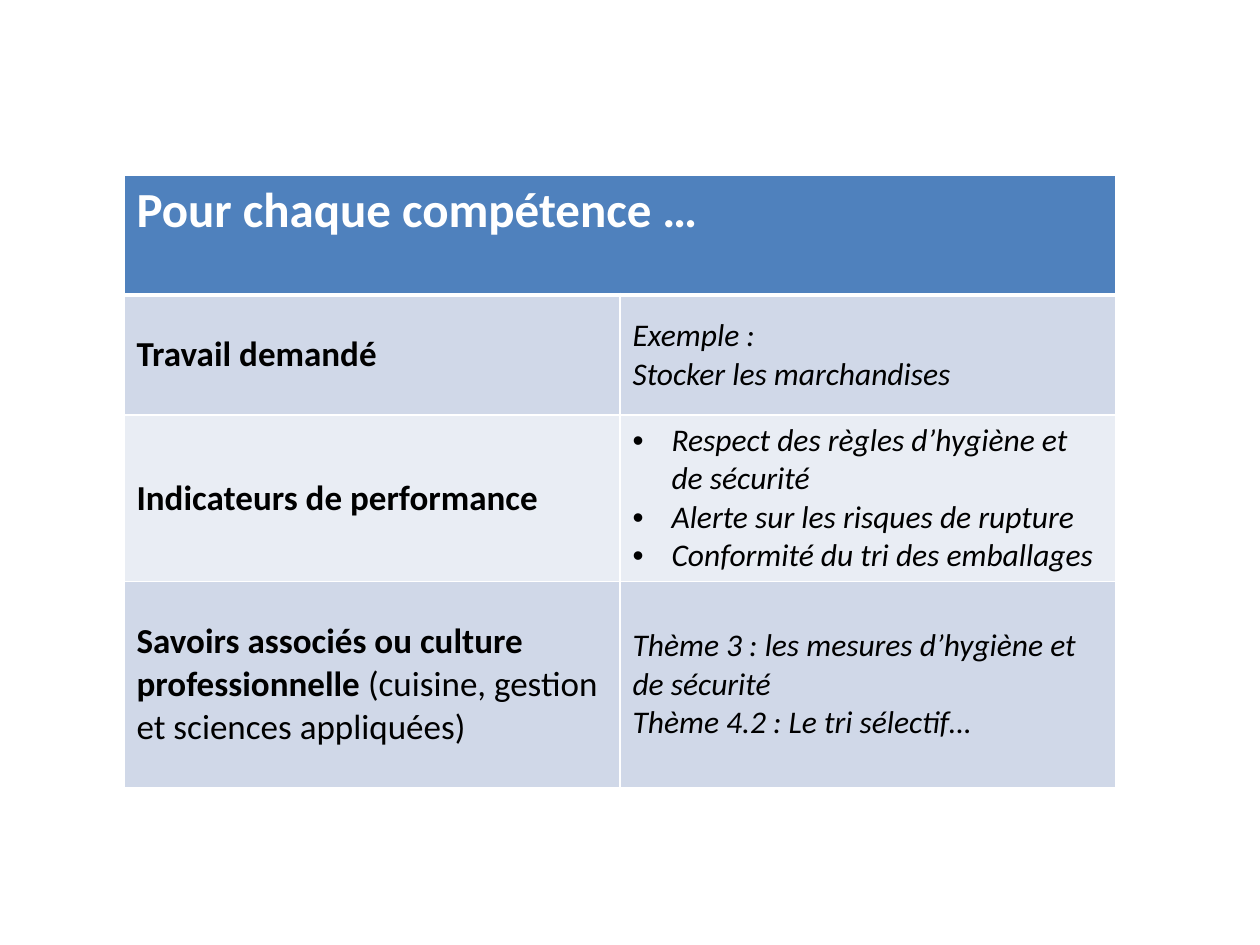
from dataclasses import dataclass

from lxml import etree
from pptx import Presentation
from pptx import util as u
from pptx.dml.color import RGBColor
from pptx.enum import text
from pptx.oxml import ns

PX = 914400 / 126


def px(n):
    return u.Emu(round(n * PX))


@dataclass(frozen=True)
class Theme:
    font: str = "Calibri"
    white: str = "FFFFFF"
    black: str = "000000"
    header: str = "4F81BD"
    bands: tuple = ("D0D8E8", "E9EDF4")
    title_size: int = 28
    label_size: int = 20
    detail_size: int = 18
    rule: int = 1
    header_rule: int = 3
    bullet_indent: int = 39


class Deck:
    def __init__(self, theme):
        self.theme = theme
        self.prs = Presentation()
        self.prs.slide_width, self.prs.slide_height = px(1260), px(945)
        self.s = self.prs.slides.add_slide(self.prs.slide_layouts[6])

    def table(self, x, y, widths, heights):
        frame = self.s.shapes.add_table(
            len(heights), len(widths), px(x), px(y), px(sum(widths)), px(sum(heights)))
        tbl = frame.table
        for col, w in zip(tbl.columns, widths):
            col.width = px(w)
        for row, h in zip(tbl.rows, heights):
            row.height = px(h)
        return tbl

    def cell(self, cell, fill, top=None, bottom=None):
        """Fill a cell and draw its four borders; top and bottom are points."""
        cell.fill.solid()
        cell.fill.fore_color.rgb = RGBColor.from_string(fill)
        rule = self.theme.rule
        sides = {"lnL": rule, "lnR": rule, "lnT": top or rule, "lnB": bottom or rule}
        tc_pr = cell._tc.get_or_add_tcPr()
        for i, (side, width) in enumerate(sides.items()):
            ln = etree.Element(ns.qn(f"a:{side}"), w=str(u.Pt(width)))
            solid = etree.SubElement(ln, ns.qn("a:solidFill"))
            etree.SubElement(solid, ns.qn("a:srgbClr"), val=self.theme.white)
            tc_pr.insert(i, ln)

    def cell_text(self, cell, paragraphs, color, anchor=text.MSO_ANCHOR.MIDDLE,
                  bullets=False, **fmt):
        """Set paragraphs, each a list of (text, font overrides) runs."""
        cell.vertical_anchor = anchor
        tf = cell.text_frame
        for i, runs in enumerate(paragraphs):
            p = tf.paragraphs[0] if i == 0 else tf.add_paragraph()
            if bullets:
                self.bullet(p)
            for content, changes in runs:
                r = p.add_run()
                r.text = content
                for name, value in {"name": self.theme.font, **fmt, **changes}.items():
                    setattr(r.font, name, value)
                r.font.color.rgb = RGBColor.from_string(color)

    def bullet(self, p):
        indent = px(self.theme.bullet_indent)
        p_pr = p._p.get_or_add_pPr()
        p_pr.set("marL", str(indent))
        p_pr.set("indent", str(-indent))
        etree.SubElement(p_pr, ns.qn("a:buFont"), typeface="Arial")
        etree.SubElement(p_pr, ns.qn("a:buChar"), char="•")


ROWS = [
    ([("Travail demandé", {})],
     ["Exemple :", "Stocker les marchandises"], False),
    ([("Indicateurs de performance", {})],
     ["Respect des règles d’hygiène et de sécurité",
      "Alerte sur les risques de rupture",
      "Conformité du tri des emballages"], True),
    ([("Savoirs associés ou culture professionnelle ", {}),
      ("(cuisine, gestion et sciences appliquées)", {"bold": False})],
     ["Thème 3 : les mesures d’hygiène et de sécurité",
      "Thème 4.2 : Le tri sélectif…"], False),
]


def main():
    theme = Theme()
    deck = Deck(theme)
    tbl = deck.table(124, 175, [496, 496], [120, 120, 120, 206])

    title = tbl.cell(0, 0)
    title.merge(tbl.cell(0, 1))
    for cell in tbl.rows[0].cells:
        deck.cell(cell, theme.header, bottom=theme.header_rule)
    deck.cell_text(title, [[("Pour chaque compétence …", {})]], theme.white,
                   anchor=text.MSO_ANCHOR.TOP, size=u.Pt(theme.title_size), bold=True)

    for i, (label, details, bullets) in enumerate(ROWS):
        left, right = tbl.rows[i + 1].cells
        for cell in (left, right):
            deck.cell(cell, theme.bands[i % 2],
                      top=theme.header_rule if i == 0 else None)
        deck.cell_text(left, [label], theme.black,
                       size=u.Pt(theme.label_size), bold=True, italic=False)
        deck.cell_text(right, [[(line, {})] for line in details], theme.black,
                       bullets=bullets, size=u.Pt(theme.detail_size),
                       bold=False, italic=True)

    deck.prs.save("out.pptx")


if __name__ == "__main__":
    main()
